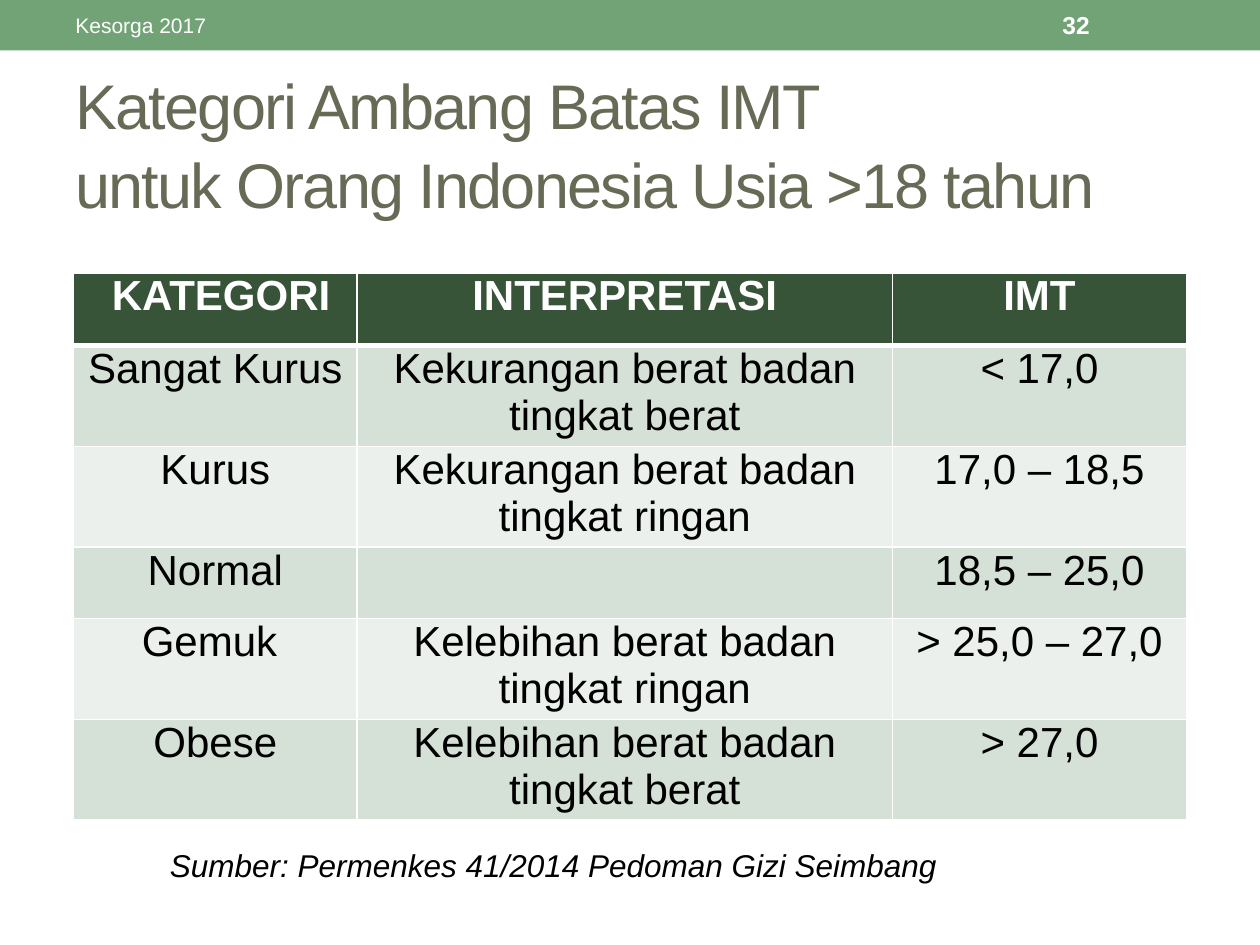
from dataclasses import dataclass

from lxml import etree
from pptx import Presentation
from pptx.dml.color import RGBColor
from pptx.enum.shapes import MSO_SHAPE
from pptx.enum.text import MSO_ANCHOR, PP_ALIGN
from pptx.oxml.ns import qn
from pptx.util import Inches, Pt

RECTANGLE = MSO_SHAPE.RECTANGLE
TOP, MIDDLE = MSO_ANCHOR.TOP, MSO_ANCHOR.MIDDLE
CENTER = PP_ALIGN.CENTER

FONT = "Arial"
COLORS = {
    "band": "72A376",
    "title": "676A55",
    "header": "375439",
    "odd": "D5E0D6",
    "even": "EBF0EC",
    "white": "FFFFFF",
    "black": "000000",
}

# The slide is a grid of 120 columns by 90 rows, each unit a twelfth of an inch
UNIT = Inches(1) / 12
COLUMNS, ROWS = 120, 90


@dataclass
class Label:
    text: str
    left: float
    top: float
    width: float
    height: float
    size: float
    color: str
    bold: bool = False
    italic: bool = False
    anchor: MSO_ANCHOR = MIDDLE
    line_spacing: float = 1.0
    letter_spacing: float = 0


LABELS = [
    Label("Kategori Ambang Batas IMT \vuntuk Orang Indonesia Usia >18 tahun",
          6, 7, 108, 13, 36, "title", line_spacing=1.05, letter_spacing=-1),
    Label("Kesorga 2017", 6, 0.25, 38, 4.3, 12, "white"),
    Label("32", 100, 0.25, 14, 4.3, 14, "white", bold=True),
    Label("Sumber: Permenkes 41/2014 Pedoman Gizi Seimbang",
          15, 80, 85, 4.8, 18, "black", italic=True, anchor=TOP),
]

TABLE_LEFT, TABLE_TOP = 7, 26
COLUMN_WIDTHS = [27, 51, 28]
ROW_HEIGHTS = [6.9, 9.15, 9.15, 6.8, 9.15, 9.15]
CATEGORIES = [
    (" KATEGORI", "INTERPRETASI", "IMT"),
    ("Sangat Kurus", "Kekurangan berat badan tingkat berat", "< 17,0"),
    ("Kurus", "Kekurangan berat badan tingkat ringan", "17,0 – 18,5"),
    ("Normal", "", "18,5 – 25,0"),
    ("Gemuk ", "Kelebihan berat badan tingkat ringan", "> 25,0 – 27,0"),
    ("Obese", "Kelebihan berat badan tingkat berat", "> 27,0"),
]


def grid(units: float) -> int:
    return round(units * UNIT)


def rgb(name: str) -> RGBColor:
    return RGBColor.from_string(COLORS[name])


def style(para, size: float, color: str, bold: bool = False, italic: bool = False) -> None:
    font = para.font
    font.name, font.size = FONT, Pt(size)
    font.bold, font.italic = bold, italic
    font.color.rgb = rgb(color)


def draw_label(page, label: Label) -> None:
    box = page.shapes.add_textbox(
        *map(grid, (label.left, label.top, label.width, label.height)))
    frame = box.text_frame
    frame.word_wrap = True
    frame.vertical_anchor = label.anchor
    para = frame.paragraphs[0]
    para.text = label.text
    para.line_spacing = label.line_spacing
    style(para, label.size, label.color, label.bold, label.italic)
    if label.letter_spacing:
        for span in para.runs:
            span._r.get_or_add_rPr().set("spc", str(round(label.letter_spacing * 100)))


def draw_borders(cell, top: float, bottom: float) -> None:
    properties = cell._tc.get_or_add_tcPr()
    for side, width in (("L", 1), ("R", 1), ("T", top), ("B", bottom)):
        line = etree.SubElement(properties, qn(f"a:ln{side}"), w=str(Pt(width)))
        fill = etree.SubElement(line, qn("a:solidFill"))
        etree.SubElement(fill, qn("a:srgbClr"), val=COLORS["white"])


def draw_cell(cell, text: str, row: int) -> None:
    is_header = row == 0
    draw_borders(cell, top=3 if row == 1 else 1, bottom=3 if is_header else 1)
    cell.fill.solid()
    cell.fill.fore_color.rgb = rgb("header" if is_header else "odd" if row % 2 else "even")
    cell.margin_left = cell.margin_right = Inches(0.07)
    cell.margin_top = cell.margin_bottom = 0
    para = cell.text_frame.paragraphs[0]
    para.text = text
    para.alignment = CENTER
    style(para, 24, "white" if is_header else "black", bold=is_header)


def draw_table(page) -> None:
    table = page.shapes.add_table(
        len(ROW_HEIGHTS), len(COLUMN_WIDTHS), grid(TABLE_LEFT), grid(TABLE_TOP),
        grid(sum(COLUMN_WIDTHS)), grid(sum(ROW_HEIGHTS))).table
    table.first_row = table.horz_banding = False
    for column, width in zip(table.columns, COLUMN_WIDTHS):
        column.width = grid(width)
    for row, height in zip(table.rows, ROW_HEIGHTS):
        row.height = grid(height)
    for row, texts in enumerate(CATEGORIES):
        for column, text in enumerate(texts):
            draw_cell(table.cell(row, column), text, row)


def main() -> None:
    deck = Presentation()
    deck.slide_width, deck.slide_height = grid(COLUMNS), grid(ROWS)
    page = deck.slides.add_slide(deck.slide_layouts[6])

    # Top band
    band = page.shapes.add_shape(RECTANGLE, 0, 0, grid(COLUMNS), grid(4.8))
    band.shadow.inherit = False
    band.fill.solid()
    band.fill.fore_color.rgb = rgb("band")
    band.line.fill.background()

    # Title, header texts and source line, then the categories
    for label in LABELS:
        draw_label(page, label)
    draw_table(page)

    deck.save("out.pptx")


if __name__ == "__main__":
    main()
